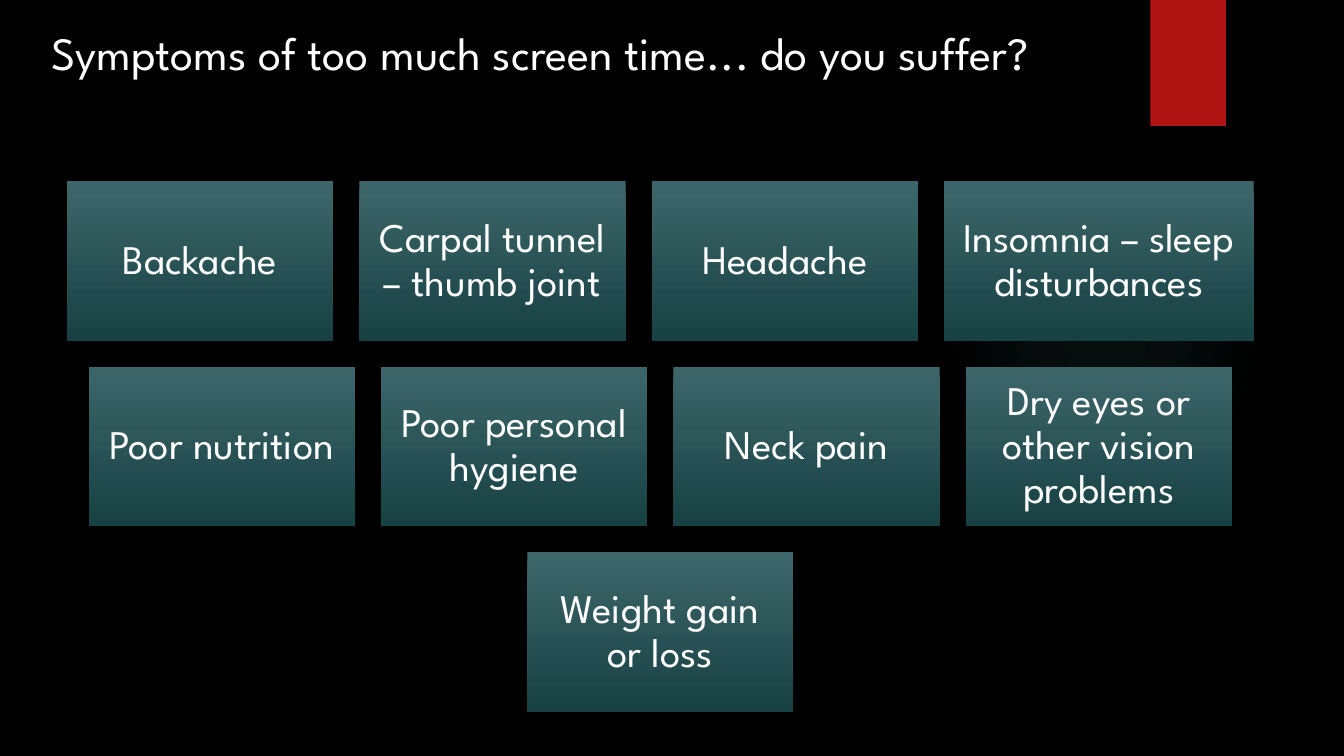
from dataclasses import dataclass

from pptx import Presentation
from pptx import util as u
from pptx.dml.color import RGBColor
from pptx.enum import shapes, text
from pptx.oxml import parse_xml
from pptx.oxml.ns import nsdecls, qn

FONT = "League Spartan"
WHITE = "FFFFFF"
CARD_GRADIENT = ("3D666A", "184144")
CARD_WIDTH, CARD_HEIGHT, GAP = 2.64, 1.58, 0.26
GRID_TOP, GRID_CENTER = 1.8, 6.55
CARD_INSET = 0.12
GLOW_STOPS = ((0, 7), (36, 6), (69, 0))  # position and opacity, in percent


@dataclass
class Symptom:
    label: str
    width: float = CARD_WIDTH


SYMPTOM_ROWS = [
    [Symptom("Backache"), Symptom("Carpal tunnel – thumb joint"),
     Symptom("Headache"), Symptom("Insomnia – sleep disturbances", 3.07)],
    [Symptom("Poor nutrition"), Symptom("Poor personal hygiene"),
     Symptom("Neck pain"), Symptom("Dry eyes or other vision problems")],
    [Symptom("Weight gain or loss")],
]


def color(value: str) -> RGBColor:
    return RGBColor.from_string(value)


def inches(*lengths: float) -> list:
    return [u.Inches(length) for length in lengths]


def add_plain_shape(slide, kind, left: float, top: float, width: float, height: float):
    """Add a shape without outline or shadow."""
    shape = slide.shapes.add_shape(kind, *inches(left, top, width, height))
    shape.shadow.inherit = False
    shape.line.fill.background()
    return shape


def write(frame, wording: str, size: int, align, anchor, inset: float, inset_y: float) -> None:
    frame_format = {
        "word_wrap": True, "vertical_anchor": anchor,
        "margin_left": u.Inches(inset), "margin_right": u.Inches(inset),
        "margin_top": u.Inches(inset_y), "margin_bottom": u.Inches(inset_y),
    }
    for name, value in frame_format.items():
        setattr(frame, name, value)
    paragraph = frame.paragraphs[0]
    paragraph.text = wording
    paragraph.alignment = align
    paragraph.line_spacing = 0.9
    for name, value in {"name": FONT, "size": u.Pt(size)}.items():
        setattr(paragraph.font, name, value)
    paragraph.font.color.rgb = color(WHITE)


def add_glow(slide) -> None:
    """Add the faint round light behind the right-hand cards."""
    glow = add_plain_shape(slide, shapes.MSO_SHAPE.OVAL, 9.41, 1.83, 3.08, 3.08)
    glow.fill.background()
    stops = "".join(
        f'<a:gs pos="{position * 1000}"><a:srgbClr val="50B9C1">'
        f'<a:alpha val="{opacity * 1000}"/></a:srgbClr></a:gs>'
        for position, opacity in GLOW_STOPS
    )
    gradient = parse_xml(
        f'<a:gradFill {nsdecls("a")}><a:gsLst>{stops}</a:gsLst><a:path path="circle">'
        '<a:fillToRect l="50000" t="50000" r="50000" b="50000"/></a:path></a:gradFill>'
    )
    properties = glow.element.spPr
    properties.replace(properties.find(qn("a:noFill")), gradient)


def add_card(slide, symptom: Symptom, left: float, top: float) -> None:
    card = add_plain_shape(slide, shapes.MSO_SHAPE.RECTANGLE,
                           left, top, symptom.width, CARD_HEIGHT)
    card.fill.gradient()
    card.fill.gradient_angle = 270
    for stop, shade in zip(card.fill.gradient_stops, CARD_GRADIENT):
        stop.color.rgb = color(shade)
    write(card.text_frame, symptom.label, 29, text.PP_ALIGN.CENTER,
          text.MSO_ANCHOR.MIDDLE, CARD_INSET, CARD_INSET)


def main() -> None:
    deck = Presentation()
    deck.slide_width, deck.slide_height = inches(13.33, 7.5)
    slide = deck.slides.add_slide(deck.slide_layouts[6])
    slide.background.fill.solid()
    slide.background.fill.fore_color.rgb = color("000000")

    add_glow(slide)
    ribbon = add_plain_shape(slide, shapes.MSO_SHAPE.RECTANGLE, 11.41, 0, 0.75, 1.25)
    ribbon.fill.solid()
    ribbon.fill.fore_color.rgb = color("B01513")

    title = slide.shapes.add_textbox(*inches(0.41, 0.25, 12.78, 1.55))
    write(title.text_frame, "Symptoms of too much screen time... do you suffer?", 33,
          text.PP_ALIGN.LEFT, text.MSO_ANCHOR.TOP, 0.1, 0.05)

    for index, row in enumerate(SYMPTOM_ROWS):
        row_width = sum(symptom.width for symptom in row) + GAP * (len(row) - 1)
        left = GRID_CENTER - row_width / 2
        top = GRID_TOP + index * (CARD_HEIGHT + GAP)
        for symptom in row:
            add_card(slide, symptom, left, top)
            left += symptom.width + GAP

    deck.save("out.pptx")


if __name__ == "__main__":
    main()
